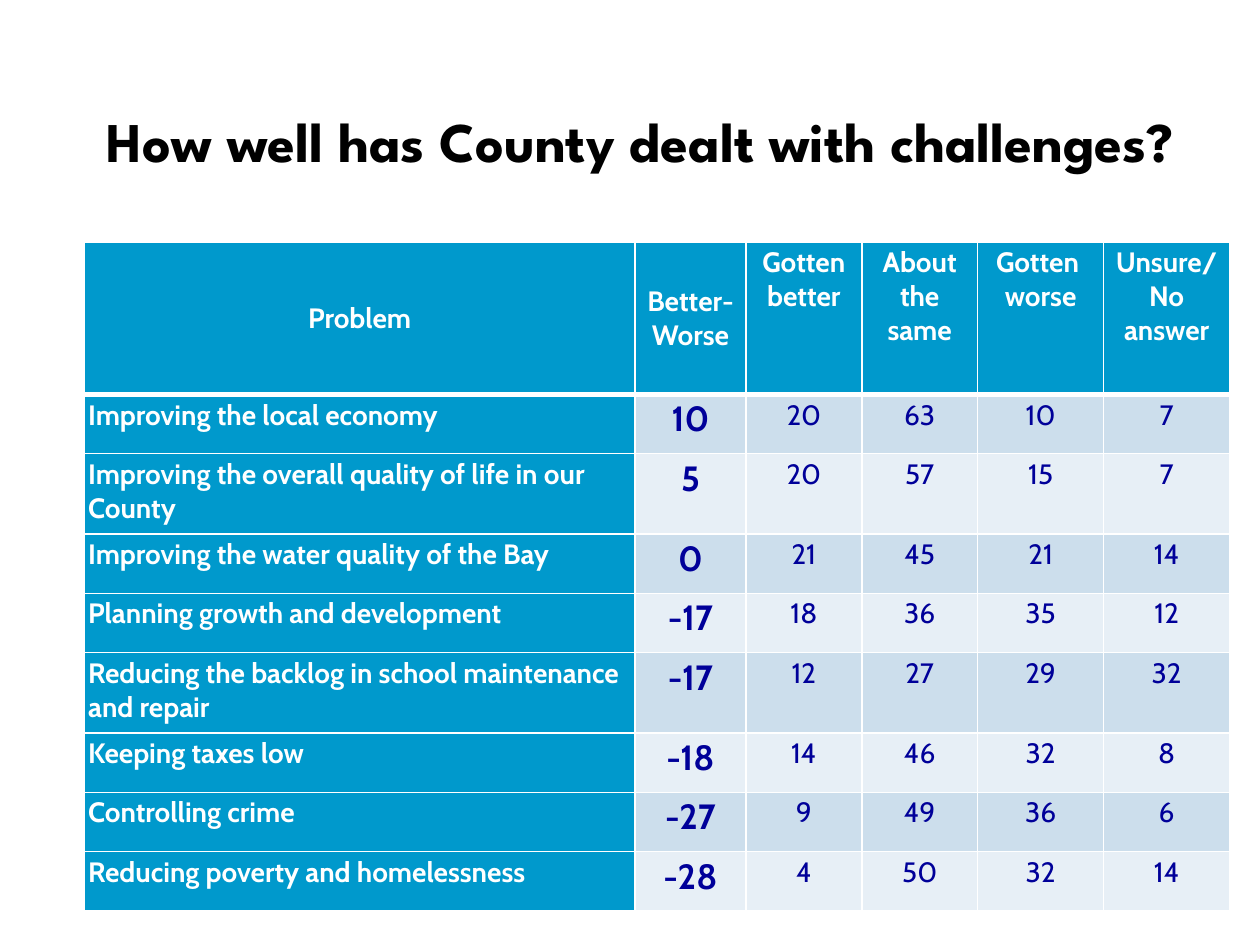
from lxml import etree
from pptx import Presentation
from pptx.dml.color import RGBColor
from pptx.enum.text import MSO_ANCHOR, PP_ALIGN
from pptx.oxml.ns import qn
from pptx.util import Inches, Pt

LEFT, CENTER = PP_ALIGN.LEFT, PP_ALIGN.CENTER
TOP, MIDDLE, BOTTOM = MSO_ANCHOR.TOP, MSO_ANCHOR.MIDDLE, MSO_ANCHOR.BOTTOM

W, H = Inches(10), Inches(7.5)
TITLE_FONT, BODY_FONT = "League Spartan", "Cabin"
BLACK, WHITE, BLUE, NAVY = "000000", "FFFFFF", "0099CC", "000099"
BANDS = ["CCDEEC", "E7EFF6"]
COLS = [4.37, 0.88, 0.92, 0.92, 1, 1]
HEAD_ROW, ONE_LINE, TWO_LINES = 1.21, 0.47, 0.64

HEADERS = ["Problem", "Better-Worse", "Gotten better", "About the same",
           "Gotten \nworse", "Unsure/No answer"]
PROBLEMS = [
    ("Improving the local economy", 10, 20, 63, 10, 7),
    ("Improving the overall quality of life in our County", 5, 20, 57, 15, 7),
    ("Improving the water quality of the Bay", 0, 21, 45, 21, 14),
    ("Planning growth and development", -17, 18, 36, 35, 12),
    ("Reducing the backlog in school maintenance and repair", -17, 12, 27, 29, 32),
    ("Keeping taxes low", -18, 14, 46, 32, 8),
    ("Controlling crime", -27, 9, 49, 36, 6),
    ("Reducing poverty and homelessness", -28, 4, 50, 32, 14),
]


def rgb(color):
    return RGBColor.from_string(color)


def add_text(tf, text, font, size, color, bold, align):
    p = tf.paragraphs[0]
    p.alignment = align
    for i, line in enumerate(text.split("\n")):
        if i:
            p.add_line_break()
        r = p.add_run()
        r.text = line
        r.font.name = font
        r.font.size = Pt(size)
        r.font.bold = bold
        r.font.color.rgb = rgb(color)


def add_title(s, text):
    sp = s.shapes.add_textbox(int(W * 0.075), int(H * 0.1), int(W * 0.875), int(H * 0.09))
    tf = sp.text_frame
    tf.word_wrap = True
    tf.vertical_anchor = BOTTOM
    add_text(tf, text, TITLE_FONT, 32, BLACK, True, LEFT)


def set_borders(cell, top, bottom):
    tcPr = cell._tc.get_or_add_tcPr()
    for side, width in (("L", 1), ("R", 1), ("T", top), ("B", bottom)):
        ln = etree.SubElement(tcPr, qn(f"a:ln{side}"), w=str(Pt(width)))
        fill = etree.SubElement(ln, qn("a:solidFill"))
        etree.SubElement(fill, qn("a:srgbClr"), val=WHITE)


def fill_cell(cell, text, row, col):
    header, label = row == 0, col == 0
    set_borders(cell, 3 if row == 1 else 1, 3 if header else 1)
    cell.fill.solid()
    cell.fill.fore_color.rgb = rgb(BLUE if header or label else BANDS[(row - 1) % 2])
    cell.margin_left = cell.margin_right = Inches(0.03)
    cell.margin_top = cell.margin_bottom = Inches(0.03)
    cell.vertical_anchor = MIDDLE if header and col < 2 else TOP
    add_text(cell.text_frame, text, BODY_FONT,
             20 if col == 1 and not header else 16,
             WHITE if header or label else NAVY,
             header or col < 2,
             LEFT if label and not header else CENTER)


def add_problem_table(s):
    heights = [HEAD_ROW] + [TWO_LINES if len(p[0]) > 45 else ONE_LINE for p in PROBLEMS]
    frame = s.shapes.add_table(len(heights), len(COLS), int(W * 0.067), int(H * 0.256),
                               Inches(sum(COLS)), Inches(sum(heights)))
    table = frame.table
    for column, width in zip(table.columns, COLS):
        column.width = Inches(width)
    for row, height in zip(table.rows, heights):
        row.height = Inches(height)
    for i, values in enumerate([HEADERS] + PROBLEMS):
        for j, value in enumerate(values):
            fill_cell(table.cell(i, j), str(value), i, j)


def main():
    prs = Presentation()
    prs.slide_width, prs.slide_height = W, H
    s = prs.slides.add_slide(prs.slide_layouts[6])
    add_title(s, "How well has County dealt with challenges?")
    add_problem_table(s)
    prs.save("out.pptx")


if __name__ == "__main__":
    main()
